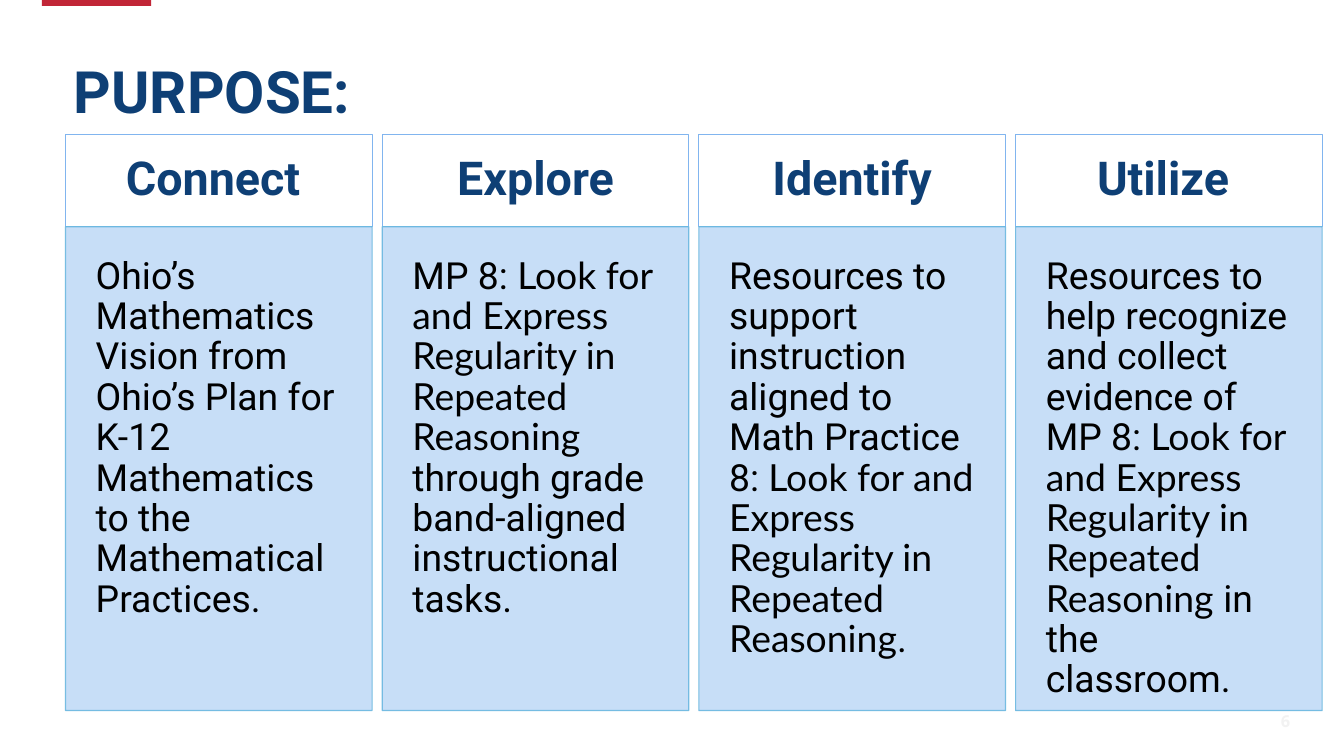
from lxml.etree import SubElement
from pptx import Presentation
from pptx.dml.color import RGBColor
from pptx.enum.shapes import MSO_SHAPE as Shape
from pptx.enum.text import MSO_ANCHOR as Anchor, MSO_AUTO_SIZE as AutoSize, PP_ALIGN as Align
from pptx.oxml.ns import qn
from pptx.util import Inches, Pt

COLORS = {
    "navy": "0E3F75", "red": "C12637", "white": "FFFFFF", "black": "000000",
    "pale": "C1DBF7", "head_line": "81B5EF", "body_line": "6BB8E0", "number": "F2F2F2",
}
PRACTICE = "Look for and Express Regularity in Repeated Reasoning"

# Heading, then the body as (text, font) runs
CARDS = [
    ("Connect ", [("Ohio’s Mathematics Vision from Ohio’s Plan for K-12 Mathematics "
                   "to the Mathematical Practices.", "Roboto")]),
    ("Explore", [("MP 8: ", "Roboto"), (PRACTICE + " ", "Lato"),
                 ("through grade band-aligned instructional tasks.", "Roboto")]),
    ("Identify", [("Resources to support instruction aligned to Math Practice 8: ", "Roboto"),
                  (PRACTICE, "Lato"), (".", "Roboto")]),
    ("Utilize ", [("Resources to help recognize and collect evidence of MP 8: ", "Roboto"),
                  (PRACTICE + " ", "Lato"), ("in the classroom.", "Roboto")]),
]


class PurposeSlide:
    def __init__(self, prs):
        self.slide = prs.slides.add_slide(prs.slide_layouts[5])

    def color(self, name):
        return RGBColor.from_string(COLORS[name])

    def fill_text(self, sp, runs, size, color, bold=False, align=Align.LEFT,
                  anchor=Anchor.MIDDLE, inset=(0.12, 0.06), spacing=0.9):
        tf = sp.text_frame
        tf.word_wrap = True
        tf.auto_size = AutoSize.NONE
        tf.vertical_anchor = anchor
        tf.margin_left = tf.margin_right = Inches(inset[0])
        tf.margin_top = tf.margin_bottom = Inches(inset[1])
        p = tf.paragraphs[0]
        p.alignment, p.line_spacing = align, spacing
        p.space_before = Pt(0)
        for text, font in runs:
            r = p.add_run()
            r.text = text
            r.font.name, r.font.size, r.font.bold = font, Pt(size), bold
            r.font.color.rgb = self.color(color)

    def title(self, text, box):
        sp = self.slide.shapes.title
        sp.left, sp.top, sp.width, sp.height = map(Inches, box)
        self.fill_text(sp, [(text, "Roboto")], 50, "navy", bold=True)

    def rect(self, box, fill, line=None, alpha=None):
        sp = self.slide.shapes.add_shape(Shape.RECTANGLE, *map(Inches, box))
        sp.shadow.inherit = False
        sp.fill.solid()
        sp.fill.fore_color.rgb = self.color(fill)
        if line:
            sp.line.color.rgb = self.color(line)
            sp.line.width = Pt(1)
        else:
            sp.line.fill.background()
        if alpha:
            for clr in sp._element.spPr.iter(qn("a:srgbClr")):
                SubElement(clr, qn("a:alpha"), val=str(alpha * 1000))
        return sp

    def card(self, left, heading, body):
        width, top, head_h, body_h = 3.65, 1.6, 1.1, 5.76
        head = self.rect((left, top, width, head_h), "white", "head_line")
        self.fill_text(head, [(heading, "Roboto")], 40, "navy", bold=True,
                       align=Align.CENTER, inset=(0.29, 0.29))
        panel = self.rect((left, top + head_h, width, body_h), "pale", "body_line", alpha=90)
        self.fill_text(panel, body, 32, "black", anchor=Anchor.TOP, inset=(0.36, 0.36))

    def number(self, text, box):
        sp = self.slide.shapes.add_textbox(*map(Inches, box))
        self.fill_text(sp, [(text, "Open Sans")], 14, "number", bold=True,
                       align=Align.RIGHT, inset=(0.14, 0.07), spacing=1.0)


def main():
    prs = Presentation()
    prs.slide_width, prs.slide_height = Inches(16), Inches(9)
    page = PurposeSlide(prs)

    # Accent bar, title and page number
    page.rect((0.5, 0, 1.3, 0.07), "red")
    page.title("PURPOSE:", (0.76, 0.48, 15, 1.29))
    page.number("6", (11.9, 8.34, 3.6, 0.48))

    # Four equal cards
    for i, (heading, body) in enumerate(CARDS):
        page.card(0.78 + i * 3.77, heading, body)

    prs.save("out.pptx")


if __name__ == "__main__":
    main()
